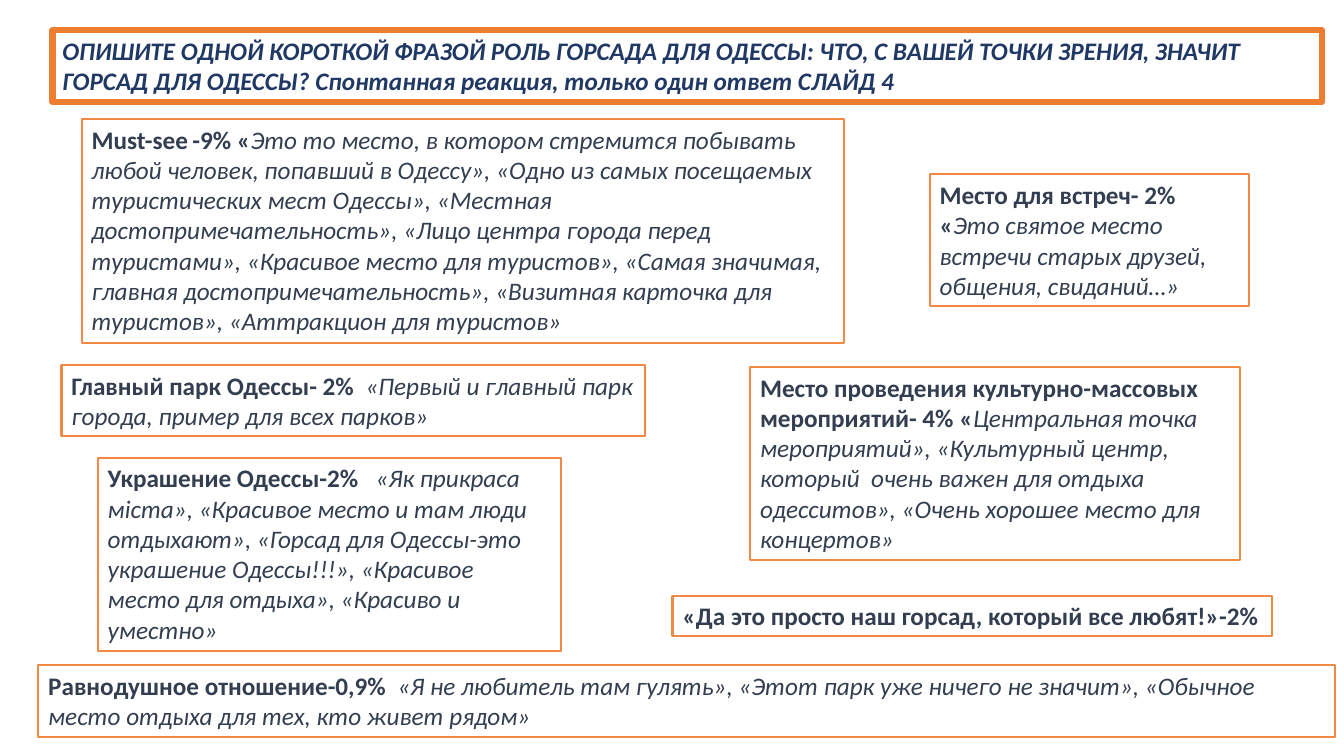
from pptx import Presentation
from pptx import util as u
from pptx.dml.color import RGBColor
from pptx.enum import shapes, text

NAVY, SLATE = "203864", "333F50"
ORANGE, LIGHT = "ED7D31", "EF8943"


def color(code):
    return RGBColor.from_string(code)


def add_box(area, runs, ink=SLATE, edge=LIGHT, width=1.5):
    """Add an outlined box; each run is (words, bold, italic)."""
    box = slide.shapes.add_shape(
        shapes.MSO_SHAPE.RECTANGLE, *[u.Inches(n) for n in area])
    box.shadow.inherit = False
    box.fill.background()
    box.line.color.rgb = color(edge)
    box.line.width = u.Pt(width)
    frame = box.text_frame
    frame.word_wrap = True
    frame.auto_size = text.MSO_AUTO_SIZE.SHAPE_TO_FIT_TEXT
    frame.vertical_anchor = text.MSO_ANCHOR.TOP
    para = frame.paragraphs[0]
    para.alignment = text.PP_ALIGN.LEFT
    for words, bold, italic in runs:
        run = para.add_run()
        run.text = words
        font = run.font
        font.name, font.size = "Calibri", u.Pt(18)
        font.bold, font.italic = bold, italic
        font.color.rgb = color(ink)


deck = Presentation()
deck.slide_width, deck.slide_height = u.Inches(13.33), u.Inches(7.5)
slide = deck.slides.add_slide(deck.slide_layouts[6])

# Answers: area, theme with its share, quotes
answers = [
    ((0.61, 3.62, 5.79, 0.71), "Главный парк Одессы- 2%  ",
     "«Первый и главный парк города, пример для всех парков»"),
    ((9.22, 1.73, 3.17, 1.31), "Место для встреч- 2% «",
     "Это святое место встречи старых друзей, общения, свиданий…»"),
    ((7.44, 3.64, 4.86, 1.92),
     "Место проведения культурно-массовых мероприятий- 4% «",
     "Центральная точка мероприятий», «Культурный центр, который  очень "
     "важен для отдыха одесситов», «Очень хорошее место для концертов»"),
    ((0.81, 1.18, 7.56, 2.22), "Must-see\t-9% «",
     "Это то место, в котором стремится побывать любой человек, попавший "
     "в Одессу», «Одно из самых посещаемых туристических мест Одессы», "
     "«Местная достопримечательность», «Лицо центра города перед "
     "туристами», «Красивое место для туристов», «Самая значимая, главная "
     "достопримечательность», «Визитная карточка для туристов», "
     "«Аттракцион для туристов»"),
    ((0.97, 4.54, 4.59, 1.92), "Украшение Одессы-2%   ",
     "«Як прикраса міста», «Красивое место и там люди отдыхают», «Горсад "
     "для Одессы-это украшение Одессы!!!», «Красивое место для отдыха», "
     "«Красиво и уместно»"),
    ((6.67, 5.91, 5.95, 0.4),
     "«Да это просто наш горсад, который все любят!»-2%", ""),
    ((0.38, 6.6, 12.86, 0.71), "Равнодушное отношение-0,9%  ",
     "«Я не любитель там гулять», «Этот парк уже ничего не значит», "
     "«Обычное место отдыха для тех, кто живет рядом»"),
]
for area, theme, quotes in answers:
    runs = [(theme, True, False)]
    if quotes:
        runs.append((quotes, False, True))
    add_box(area, runs)

# Question
title = ("ОПИШИТЕ ОДНОЙ КОРОТКОЙ ФРАЗОЙ РОЛЬ ГОРСАДА ДЛЯ ОДЕССЫ: ЧТО, С ВАШЕЙ "
         "ТОЧКИ ЗРЕНИЯ, ЗНАЧИТ ГОРСАД ДЛЯ ОДЕССЫ? Спонтанная реакция, только "
         "один ответ СЛАЙД 4")
add_box((0.52, 0.3, 12.59, 0.71), [(title, True, True)], NAVY, ORANGE, 4.5)

deck.save("out.pptx")
